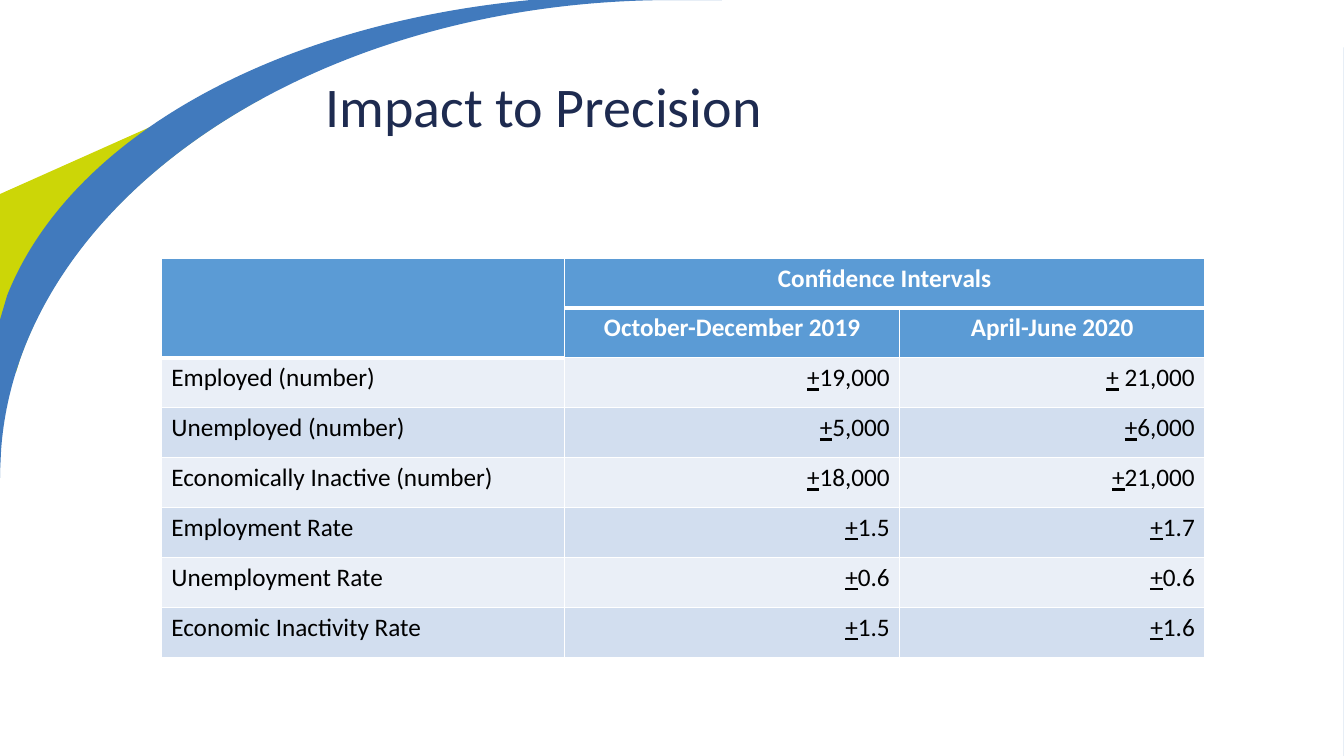
from math import cos, radians, sin

from lxml.etree import SubElement
from pptx import Presentation
from pptx.dml.color import RGBColor
from pptx.enum.text import MSO_ANCHOR, PP_ALIGN
from pptx.oxml.ns import qn
from pptx.util import Inches, Pt

NAVY = RGBColor(0x1E, 0x2B, 0x50)
LIME = RGBColor(0xCC, 0xD6, 0x07)
BLUE = RGBColor(0x41, 0x7A, 0xBD)
HEADER = RGBColor(0x5B, 0x9B, 0xD5)
BANDS = (RGBColor(0xEA, 0xEF, 0xF7), RGBColor(0xD2, 0xDE, 0xEF))
WHITE = RGBColor(0xFF, 0xFF, 0xFF)
BLACK = RGBColor(0, 0, 0)

PERIODS = ("October-December 2019", "April-June 2020")
INTERVALS = (
    ("Employed (number)", "19,000", " 21,000"),
    ("Unemployed (number)", "5,000", "6,000"),
    ("Economically Inactive (number)", "18,000", "21,000"),
    ("Employment Rate", "1.5", "1.7"),
    ("Unemployment Rate", "0.6", "0.6"),
    ("Economic Inactivity Rate", "1.5", "1.6"),
)

# A contour is a list of steps: one point is a corner, three points are a curve.
LIME_WEDGE = [[
    [(18.9, 10.67)], [(19.5, 13.07)], [(19.05, 13.47)],
    [(10.5, 22), (4.2, 33.73), (1.5, 47.47)],
    [(1.2, 49.2)], [(-0.08, 44.27)], [(-0.08, 25.73)],
]]
BLUE_ARC = [
    [[(100, 6.27)], [(100, 100)], [(100, 21.2)]],
    [
        [(52.66, -0.13)], [(53.11, -0.13)], [(53.71, 0)], [(50.04, 0)],
        [(23.26, 0), (1.43, 26.4), (0.08, 59.47)],
        [(0, 62.53)], [(0, 63.2)], [(-0.08, 62.93)], [(0, 42.27)], [(0.53, 39.07)],
        [(5.18, 18.27), (20.41, 3.2), (39.46, 0)], [(41.19, -0.13)],
    ],
]


class Deck:
    """Draws on one slide; every length is a percentage of its width or height."""

    font_name = "Calibri"

    def __init__(self):
        self.presentation = Presentation()
        self.presentation.slide_width = Inches(13.33)
        self.presentation.slide_height = Inches(7.5)
        self.slide = self.presentation.slides.add_slide(
            self.presentation.slide_layouts[5])

    def across(self, share):
        return round(self.presentation.slide_width * share / 100)

    def down(self, share):
        return round(self.presentation.slide_height * share / 100)

    def style(self, paragraph, size, color, align, bold=False):
        paragraph.alignment = align
        font = paragraph.font
        font.name, font.size, font.bold = self.font_name, Pt(size), bold
        font.color.rgb = color

    def title(self, text, left, top, width, height):
        heading = self.slide.shapes.title
        heading.left, heading.top = self.across(left), self.down(top)
        heading.width, heading.height = self.across(width), self.down(height)
        heading.text_frame.text = text
        heading.text_frame.vertical_anchor = MSO_ANCHOR.MIDDLE
        paragraph = heading.text_frame.paragraphs[0]
        paragraph.line_spacing = 0.9
        self.style(paragraph, 40, NAVY, PP_ALIGN.LEFT)

    def outline(self, contours, color, left, top, width, height, turn):
        """Draw contours, given as they show on the slide, in a frame turned by degrees."""
        x, y = self.across(left), self.down(top)
        w, h = self.across(width), self.down(height)
        builder = self.slide.shapes.build_freeform(x, y)
        builder.add_line_segments([(x + w, y), (x + w, y + h), (x, y + h)])
        shape = builder.convert_to_shape()
        shape.rotation = turn
        shape.shadow.inherit = False
        shape.fill.solid()
        shape.fill.fore_color.rgb = color
        shape.line.fill.background()

        cosine, sine = cos(radians(turn)), sin(radians(turn))
        outline_path = next(shape.element.iter(qn("a:path")))
        for command in list(outline_path):
            outline_path.remove(command)
        for contour in contours:
            for number, points in enumerate(contour):
                tag = "a:cubicBezTo" if len(points) == 3 else "a:lnTo"
                command = SubElement(outline_path, qn(tag if number else "a:moveTo"))
                for point in points:
                    dx = self.across(point[0]) - x - w / 2
                    dy = self.down(point[1]) - y - h / 2
                    SubElement(command, qn("a:pt"),
                               x=str(round(w / 2 + dx * cosine + dy * sine)),
                               y=str(round(h / 2 - dx * sine + dy * cosine)))
            SubElement(outline_path, qn("a:close"))

    def table(self, left, top, widths, row_height, row_count):
        frame = self.slide.shapes.add_table(
            row_count, len(widths), self.across(left), self.down(top),
            self.across(sum(widths)), self.down(row_height * row_count))
        for column, width in zip(frame.table.columns, widths):
            column.width = self.across(width)
        return frame.table

    def borders(self, cell, color, **widths):
        """Rule the named edges (L, R, T, B) at widths in points."""
        properties = cell._tc.get_or_add_tcPr()
        for edge, width in widths.items():
            line = SubElement(properties, qn(f"a:ln{edge}"), w=str(Pt(width)))
            SubElement(SubElement(line, qn("a:solidFill")), qn("a:srgbClr"),
                       val=str(color))

    def cell(self, cell, text, fill, color, align, bold=False, sign=""):
        """Fill a cell; a sign stands underlined before the text."""
        cell.fill.solid()
        cell.fill.fore_color.rgb = fill
        paragraph = cell.text_frame.paragraphs[0]
        if sign:
            sign_run = paragraph.add_run()
            sign_run.text = sign
            sign_run.font.underline = True
        if text:
            paragraph.add_run().text = text
        self.style(paragraph, 18, color, align, bold)


def draw_intervals(deck):
    table = deck.table(12, 34.13, (30, 24.95, 22.7), 6.6, len(INTERVALS) + 2)
    table.cell(0, 0).merge(table.cell(1, 0))
    table.cell(0, 1).merge(table.cell(0, 2))
    headings = (("", "Confidence Intervals", ""), ("", *PERIODS))
    for row, labels in enumerate(headings):
        for column, label in enumerate(labels):
            heading = table.cell(row, column)
            if row == 0:
                deck.borders(heading, WHITE, L=1, R=1, T=1, B=3)
            deck.cell(heading, label, HEADER, WHITE, PP_ALIGN.CENTER, bold=True)
    for row, (measure, *margins) in enumerate(INTERVALS):
        band = BANDS[row % 2]
        deck.cell(table.cell(row + 2, 0), measure, band, BLACK, PP_ALIGN.LEFT)
        for column, margin in enumerate(margins, 1):
            deck.cell(table.cell(row + 2, column), margin, band, BLACK,
                      PP_ALIGN.RIGHT, sign="+")


def main():
    deck = Deck()
    deck.outline(LIME_WEDGE, LIME, -2.48, 18.8, 25.06, 22.27, turn=335.9)
    deck.outline(BLUE_ARC, BLUE, -0.08, -0.27, 102.25, 93.47, turn=184.4)
    deck.title("Impact to Precision", 23.48, 7.07, 69.6, 14.8)
    draw_intervals(deck)
    deck.presentation.save("out.pptx")


if __name__ == "__main__":
    main()
